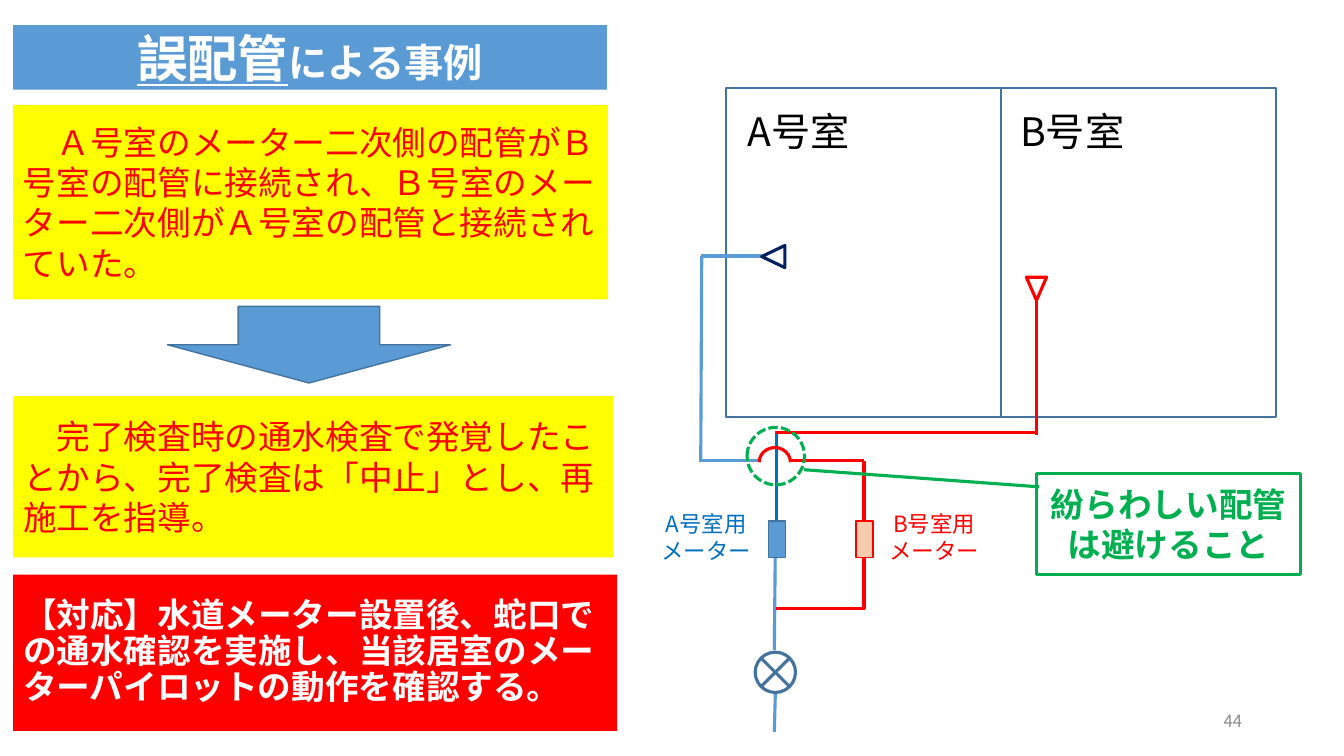
from lxml import etree
from pptx import Presentation
from pptx.dml.color import RGBColor
from pptx.enum.dml import MSO_LINE
from pptx.enum.shapes import MSO_CONNECTOR, MSO_SHAPE
from pptx.enum.text import MSO_ANCHOR, PP_ALIGN
from pptx.oxml.ns import qn
from pptx.util import Inches, Pt

FONT = "Noto Sans CJK JP"
WHITE = RGBColor(0xFF, 0xFF, 0xFF)
BLACK = RGBColor(0x00, 0x00, 0x00)
GRAY = RGBColor(0x8C, 0x8C, 0x8C)
BLUE = RGBColor(0x5B, 0x9B, 0xD5)
OUTLINE_BLUE = RGBColor(0x43, 0x73, 0x9E)
DEEP_BLUE = RGBColor(0x00, 0x70, 0xC0)
NAVY = RGBColor(0x00, 0x20, 0x60)
RED = RGBColor(0xFF, 0x00, 0x00)
YELLOW = RGBColor(0xFF, 0xFF, 0x00)
PEACH = RGBColor(0xF8, 0xCB, 0xAD)
GREEN = RGBColor(0x00, 0xB0, 0x50)

RECT, TRIANGLE, ARC = MSO_SHAPE.RECTANGLE, MSO_SHAPE.ISOSCELES_TRIANGLE, MSO_SHAPE.ARC
OVAL, DOWN_ARROW = MSO_SHAPE.OVAL, MSO_SHAPE.DOWN_ARROW
VALVE, CALLOUT = MSO_SHAPE.FLOWCHART_SUMMING_JUNCTION, MSO_SHAPE.LINE_CALLOUT_1
STRAIGHT, DASH = MSO_CONNECTOR.STRAIGHT, MSO_LINE.SQUARE_DOT
LEFT, CENTER, RIGHT = PP_ALIGN.LEFT, PP_ALIGN.CENTER, PP_ALIGN.RIGHT
MIDDLE = MSO_ANCHOR.MIDDLE
PIPE_WIDTH = 2.25


def write(frame, paragraphs, color, align=LEFT, spacing=None):
    """Fill a text frame with paragraphs, each a list of (text, format) runs."""
    frame.word_wrap = True
    frame.vertical_anchor = MIDDLE
    for index, runs in enumerate(paragraphs):
        paragraph = frame.add_paragraph() if index else frame.paragraphs[0]
        paragraph.alignment = align
        paragraph.line_spacing = spacing
        for text, formats in runs:
            run = paragraph.add_run()
            run.text = text
            run.font.color.rgb = color
            for key, value in {"name": FONT, **formats}.items():
                setattr(run.font, key, value)
            east_asian = etree.SubElement(run.font._element, qn("a:ea"))
            east_asian.set("typeface", FONT)


def draw(slide, kind, box, fill=None, line=None, width=PIPE_WIDTH, rotation=0, adjust=()):
    """Add a preset shape at (left, top, width, height) in inches."""
    shape = slide.shapes.add_shape(kind, *map(Inches, box))
    shape.shadow.inherit = False
    shape.rotation = rotation
    for index, value in enumerate(adjust):
        shape.adjustments[index] = value
    if fill is None:
        shape.fill.background()
    else:
        shape.fill.solid()
        shape.fill.fore_color.rgb = fill
    if line is None:
        shape.line.fill.background()
    else:
        shape.line.color.rgb = line
        shape.line.width = Pt(width)
    return shape


def draw_pipe(slide, start, end, color):
    """Add a straight pipe between two points in inches."""
    pipe = slide.shapes.add_connector(STRAIGHT, *map(Inches, start + end))
    pipe.line.color.rgb = color
    pipe.line.width = Pt(PIPE_WIDTH)
    etree.SubElement(pipe._element.spPr, qn("a:effectLst"))


def build_explanation(slide, left, top):
    """Place the title, the two findings, the arrow and the response."""
    body = {"size": Pt(24)}
    bold = {"size": Pt(24), "bold": True}
    title = [("誤配管", {"size": Pt(36), "bold": True, "underline": True}),
             ("による事例", {"size": Pt(28), "bold": True})]
    fault = "　Ａ号室のメーター二次側の配管がＢ号室の配管に接続され、Ｂ号室のメーター二次側がＡ号室の配管と接続されていた。"
    finding = "　完了検査時の通水検査で発覚したことから、完了検査は「中止」とし、再施工を指導。"
    response = "【対応】水道メーター設置後、蛇口での通水確認を実施し、当該居室のメーターパイロットの動作を確認する。"
    panels = [
        (0, 5.89, 0.64, BLUE, WHITE, title, CENTER, None),
        (0.79, 5.9, 1.93, YELLOW, RED, [(fault, body)], LEFT, None),
        (3.68, 5.95, 1.6, YELLOW, RED, [(finding, body)], LEFT, None),
        (5.45, 5.99, 1.55, RED, WHITE, [(response, bold)], LEFT, 0.9),
    ]
    for offset, width, height, fill, color, runs, align, spacing in panels:
        panel = draw(slide, RECT, (left, top + offset, width, height), fill)
        write(panel.text_frame, [runs], color, align, spacing)
    draw(slide, DOWN_ARROW, (left + 1.53, top + 2.79, 2.81, 0.76), BLUE, OUTLINE_BLUE, 1)


def build_piping(slide, left, top):
    """Place the rooms, pipes, meters, taps and the warning callout."""
    def at(x, y, *size):
        return (left + x, top + y, *size)

    labels = [
        (2.26, 4.05, ["B号室用", "メーター"], 16, RED),
        (0, 4.05, ["A号室用", "メーター"], 16, DEEP_BLUE),
        (3.63, 0.02, ["B号室"], 28, BLACK),
        (0.92, 0.02, ["A号室"], 28, BLACK),
    ]
    for x, y, lines, size, color in labels:
        label = draw(slide, RECT, at(x, y, 1.61, 0.81), WHITE)
        write(label.text_frame, [[(text, {"size": Pt(size)})] for text in lines], color, CENTER)

    room_width = 2.73
    for room in range(2):
        draw(slide, RECT, at(1 + room * room_width, 0, room_width, 3.27), None, OUTLINE_BLUE, 1.5)

    pipes = [
        ((1.49, 4.52), (1.48, 5.58), BLUE),
        ((1.49, 6.01), (1.48, 6.39), BLUE),
        ((0.75, 1.67), (1.36, 1.67), BLUE),
        ((0.75, 3.71), (0.76, 1.67), BLUE),
        ((1.33, 3.7), (0.73, 3.7), BLUE),
        ((1.5, 3.41), (1.5, 4.31), DEEP_BLUE),
        ((1.5, 5.17), (2.38, 5.17), RED),
        ((2.37, 4.52), (2.37, 5.17), RED),
        ((2.37, 3.7), (2.37, 4.31), RED),
        ((2.37, 3.7), (1.64, 3.7), RED),
        ((4.08, 3.42), (1.5, 3.42), RED),
        ((4.08, 3.45), (4.08, 2.1), RED),
    ]
    for start, end, color in pipes:
        draw_pipe(slide, at(*start), at(*end), color)

    for x, fill, line in [(1.42, BLUE, OUTLINE_BLUE), (2.29, PEACH, RED)]:
        draw(slide, RECT, at(x, 4.3, 0.17, 0.36), fill, line, 1)
    draw(slide, VALVE, at(1.29, 5.6, 0.4, 0.4), line=OUTLINE_BLUE)
    draw(slide, TRIANGLE, at(3.98, 1.88, 0.2, 0.23), line=RED, rotation=180)
    draw(slide, TRIANGLE, at(1.36, 1.56, 0.22, 0.23), line=NAVY, rotation=270)
    draw(slide, ARC, at(1.33, 3.57, 0.31, 0.29), line=RED, adjust=(108, 0))

    warning = draw(slide, CALLOUT, at(4.08, 3.83, 2.62, 1), line=GREEN,
                   adjust=(0.13, 0.01, -0.04, -0.88))
    write(warning.text_frame, [[("紛らわしい配管は避けること", {"size": Pt(24), "bold": True})]],
          GREEN, CENTER)
    crossing = draw(slide, OVAL, at(1.21, 3.37, 0.57, 0.57), line=GREEN)
    crossing.line.dash_style = DASH


def build_page_number(slide, left, top):
    """Place the page number in the lower right corner."""
    number = slide.shapes.add_textbox(*map(Inches, (left, top, 3, 0.4)))
    write(number.text_frame, [[("44", {"size": Pt(12)})]], GRAY, RIGHT)


def main():
    """Build the slide and save it."""
    deck = Presentation()
    deck.slide_width, deck.slide_height = Inches(13.33), Inches(7.5)
    slide = deck.slides.add_slide(deck.slide_layouts[6])
    build_explanation(slide, 0.13, 0.25)
    build_piping(slide, 6.2, 0.87)
    build_page_number(slide, 9.42, 6.95)
    deck.save("out.pptx")


if __name__ == "__main__":
    main()
